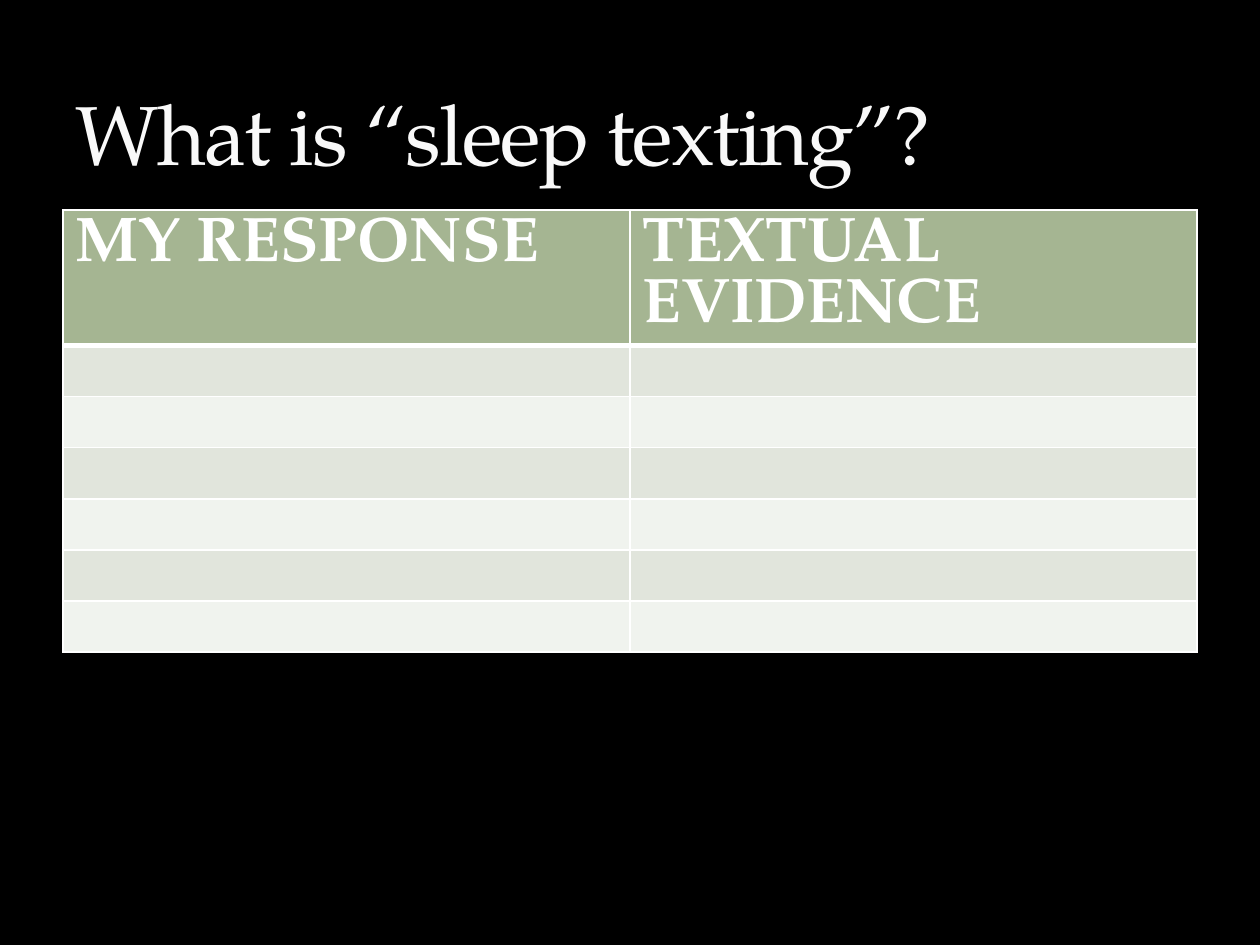
from dataclasses import dataclass

from lxml.etree import SubElement
from pptx import Presentation
from pptx.dml.color import RGBColor as RGB
from pptx.enum.text import MSO_ANCHOR as Anchor
from pptx.oxml import parse_xml
from pptx.oxml.ns import nsdecls, qn
from pptx.util import Cm, Pt


@dataclass(frozen=True)
class Theme:
    font: str = "TeX Gyre Pagella"
    background: str = "000000"
    title: str = "F9F9F9"
    outline: str = "3C4422"
    white: str = "FFFFFF"
    header: str = "A5B592"
    bands: tuple[str, str] = ("E1E5DC", "F0F3EE")
    title_size: int = 48
    header_size: int = 36
    rule: int = 1
    header_rule: int = 3


@dataclass(frozen=True)
class Box:
    left: float
    top: float
    width: float
    height: float

    def lengths(self) -> tuple:
        return tuple(Cm(v) for v in (self.left, self.top, self.width, self.height))


THEME = Theme()
TITLE_BOX = Box(1.27, 0.43, 22.86, 3.38)
TABLE_BOX = Box(1.27, 4.23, 22.86, 8.9)
HEADINGS = ("MY RESPONSE", "TEXTUAL EVIDENCE")
ANSWER_ROWS = 6
HEADER_HEIGHT = 2.72
ROW_HEIGHT = 1.03


def add_run(p, text: str, size: int, color: str, bold: bool = False):
    r = p.add_run()
    r.text = text
    for name, value in {"name": THEME.font, "size": Pt(size), "bold": bold}.items():
        setattr(r.font, name, value)
    r.font.color.rgb = RGB.from_string(color)
    return r


def add_title(s, text: str, box: Box) -> None:
    tf = s.shapes.add_textbox(*box.lengths()).text_frame
    for name, value in {"word_wrap": True, "vertical_anchor": Anchor.BOTTOM}.items():
        setattr(tf, name, value)
    r = add_run(tf.paragraphs[0], text, THEME.title_size, THEME.title)

    # Tight letter spacing and a faint outline
    props = r.font._element
    props.set("spc", "-100")
    props.insert(0, parse_xml(
        f'<a:ln {nsdecls("a")} w="{Pt(0.25)}"><a:solidFill>'
        f'<a:srgbClr val="{THEME.outline}"><a:alpha val="25000"/></a:srgbClr>'
        '</a:solidFill></a:ln>'))


def style_cell(cell, fill: str, top: int, bottom: int) -> None:
    # Borders precede the fill in the cell properties
    props = cell._tc.get_or_add_tcPr()
    widths = {"L": THEME.rule, "R": THEME.rule, "T": top, "B": bottom}
    for side, width in widths.items():
        ln = SubElement(props, qn(f"a:ln{side}"), w=str(Pt(width)))
        SubElement(SubElement(ln, qn("a:solidFill")), qn("a:srgbClr"), val=THEME.white)
    cell.fill.solid()
    cell.fill.fore_color.rgb = RGB.from_string(fill)


def add_response_table(s, headings: tuple[str, ...], box: Box) -> None:
    table = s.shapes.add_table(ANSWER_ROWS + 1, len(headings), *box.lengths()).table
    for i, row in enumerate(table.rows):
        row.height = Cm(ROW_HEIGHT if i else HEADER_HEIGHT)
        fill = THEME.bands[(i - 1) % 2] if i else THEME.header
        top = THEME.header_rule if i == 1 else THEME.rule
        bottom = THEME.rule if i else THEME.header_rule
        for cell in row.cells:
            style_cell(cell, fill, top, bottom)
    for cell, text in zip(table.rows[0].cells, headings):
        add_run(cell.text_frame.paragraphs[0], text, THEME.header_size, THEME.white, True)


def main() -> None:
    prs = Presentation()
    prs.slide_width, prs.slide_height = Cm(25.4), Cm(19.05)
    s = prs.slides.add_slide(prs.slide_layouts[6])
    s.background.fill.solid()
    s.background.fill.fore_color.rgb = RGB.from_string(THEME.background)

    # Response table below the question
    add_response_table(s, HEADINGS, TABLE_BOX)
    add_title(s, "What is “sleep texting”?", TITLE_BOX)
    prs.save("out.pptx")


if __name__ == "__main__":
    main()
